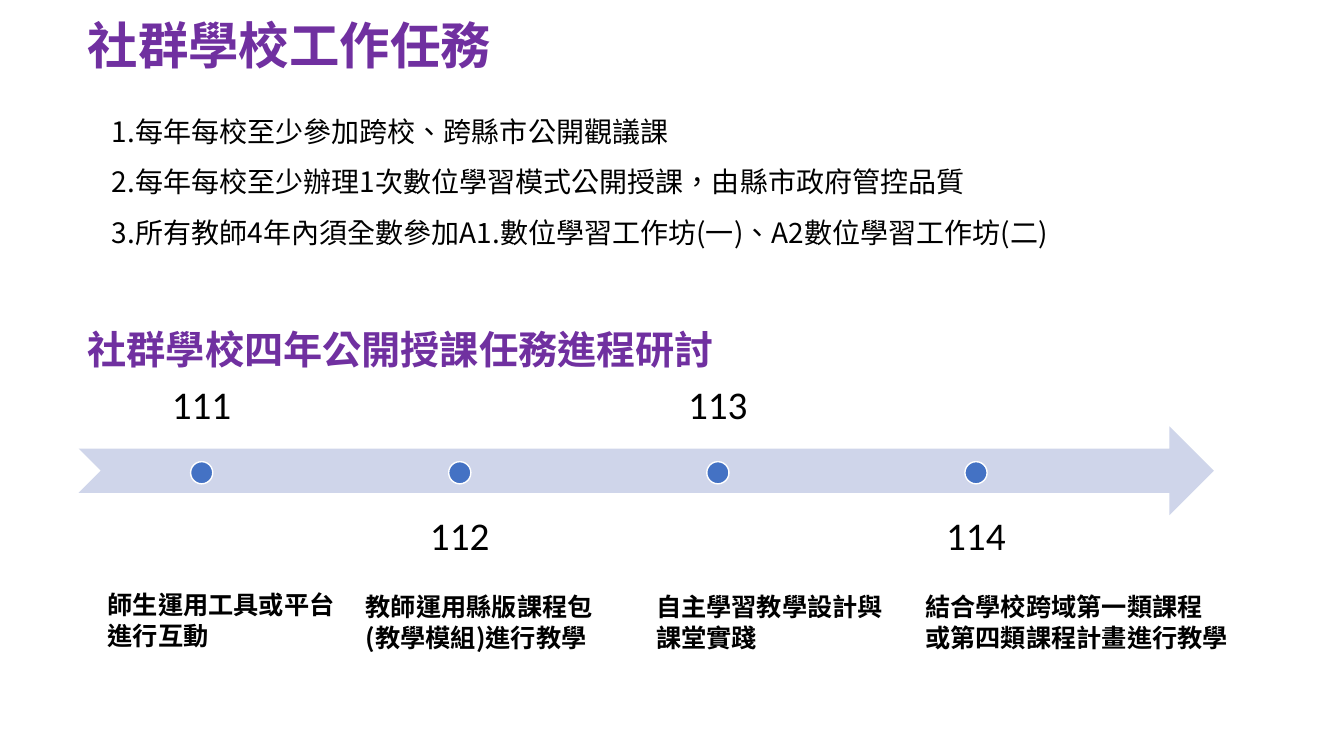
from lxml import etree
from pptx import Presentation
from pptx.dml.color import RGBColor
from pptx.enum.shapes import MSO_SHAPE
from pptx.enum.text import MSO_ANCHOR, MSO_AUTO_SIZE, PP_ALIGN
from pptx.oxml.ns import qn
from pptx.util import Inches, Pt

ARROW, DOT = MSO_SHAPE.NOTCHED_RIGHT_ARROW, MSO_SHAPE.OVAL
TOP, BOTTOM = MSO_ANCHOR.TOP, MSO_ANCHOR.BOTTOM
LEFT, CENTER = PP_ALIGN.LEFT, PP_ALIGN.CENTER
CJK, LATIN = "Noto Sans CJK SC", "Calibri"
PURPLE, BLACK, BLUE, PALE, WHITE = "7030A0", "000000", "4472C4", "CFD5EA", "FFFFFF"

TASKS = [
    "1.每年每校至少參加跨校、跨縣市公開觀議課",
    "2.每年每校至少辦理1次數位學習模式公開授課，由縣市政府管控品質",
    "3.所有教師4年內須全數參加A1.數位學習工作坊(一)、A2數位學習工作坊(二)",
]
YEARS = ["111", "112", "113", "114"]
STEPS = [
    (0.97, 5.8, 2.47, ["師生運用工具或平台", "進行互動"]),
    (3.53, 5.82, 2.47, ["教師運用縣版課程包", "(教學模組)進行教學"]),
    (6.41, 5.82, 2.47, ["自主學習教學設計與", "課堂實踐"]),
    (9.08, 5.82, 3.23, ["結合學校跨域第一類課程", "或第四類課程計畫進行教學"]),
]


def rgb(value):
    """Return the colour for a hex string."""
    return RGBColor.from_string(value)


def place(sp, left, top, width, height):
    """Move and size a shape, in inches."""
    sp.left, sp.top = Inches(left), Inches(top)
    sp.width, sp.height = Inches(width), Inches(height)


def write(sp, lines, size=18, color=BLACK, bold=False, font=CJK, align=LEFT,
          anchor=TOP, spacing=1.0, inset=None):
    """Fill a shape with one formatted paragraph per line."""
    tf = sp.text_frame
    tf.word_wrap = True
    tf.auto_size = MSO_AUTO_SIZE.NONE
    tf.vertical_anchor = anchor
    tf.margin_left = tf.margin_right = Inches(0.1 if inset is None else inset)
    tf.margin_top = tf.margin_bottom = Inches(0.05 if inset is None else inset)
    for i, line in enumerate(lines):
        p = tf.paragraphs[0] if i == 0 else tf.add_paragraph()
        p.alignment, p.line_spacing = align, spacing
        p.space_before = p.space_after = Pt(0)
        r = p.add_run()
        r.text = line
        r.font.size, r.font.bold, r.font.name = Pt(size), bold, font
        r.font.color.rgb = rgb(color)
        rPr = r._r.get_or_add_rPr()
        rPr.set("lang", "zh-TW")
        etree.SubElement(rPr, qn("a:ea")).set("typeface", font)


def add_text(s, box, lines, **fmt):
    """Add a text box with formatted lines."""
    write(s.shapes.add_textbox(*map(Inches, box)), lines, **fmt)


def add_shape(s, kind, box, fill, line=None):
    """Add a flat preset shape."""
    sp = s.shapes.add_shape(kind, *map(Inches, box))
    sp.shadow.inherit = False
    sp.fill.solid()
    sp.fill.fore_color.rgb = rgb(fill)
    if line:
        sp.line.color.rgb = rgb(line)
        sp.line.width = Pt(1)
    else:
        sp.line.fill.background()


def add_tasks(s):
    """Put the task list in the body placeholder, without bullets."""
    body = s.placeholders[1]
    place(body, 1.01, 0.92, 10.58, 1.62)
    write(body, TASKS, size=20, spacing=1.5)
    for p in body.text_frame.paragraphs:
        pPr = p._p.get_or_add_pPr()
        pPr.set("marL", "0")
        pPr.set("indent", "0")
        etree.SubElement(pPr, qn("a:buNone"))


def add_timeline(s):
    """Draw the arrow with its dots and alternating year labels."""
    add_shape(s, ARROW, (0.78, 4.23, 11.26, 0.88), PALE)
    for i, year in enumerate(YEARS):
        left = 0.78 + 2.56 * i
        above = i % 2 == 0
        add_text(s, (left, 3.59 if above else 4.91, 2.44, 0.88), [year], size=28,
                 font=LATIN, align=CENTER, anchor=BOTTOM if above else TOP,
                 spacing=0.9, inset=0.22)
        add_shape(s, DOT, (left + 1.11, 4.58, 0.22, 0.22), BLUE, WHITE)


def main():
    """Build and save the slide."""
    prs = Presentation()
    prs.slide_width, prs.slide_height = Inches(13.33), Inches(7.5)
    s = prs.slides.add_slide(prs.slide_layouts[1])
    place(s.shapes.title, 0.77, 0.09, 4.24, 0.71)
    write(s.shapes.title, ["社群學校工作任務"], size=36, color=PURPLE, bold=True)
    add_tasks(s)
    add_timeline(s)
    add_text(s, (0.77, 3.18, 6.48, 0.57), ["社群學校四年公開授課任務進程研討"],
             size=28, color=PURPLE, bold=True)
    for left, top, width, lines in STEPS:
        add_text(s, (left, top, width, 0.71), lines, bold=True)
    prs.save("out.pptx")


if __name__ == "__main__":
    main()
